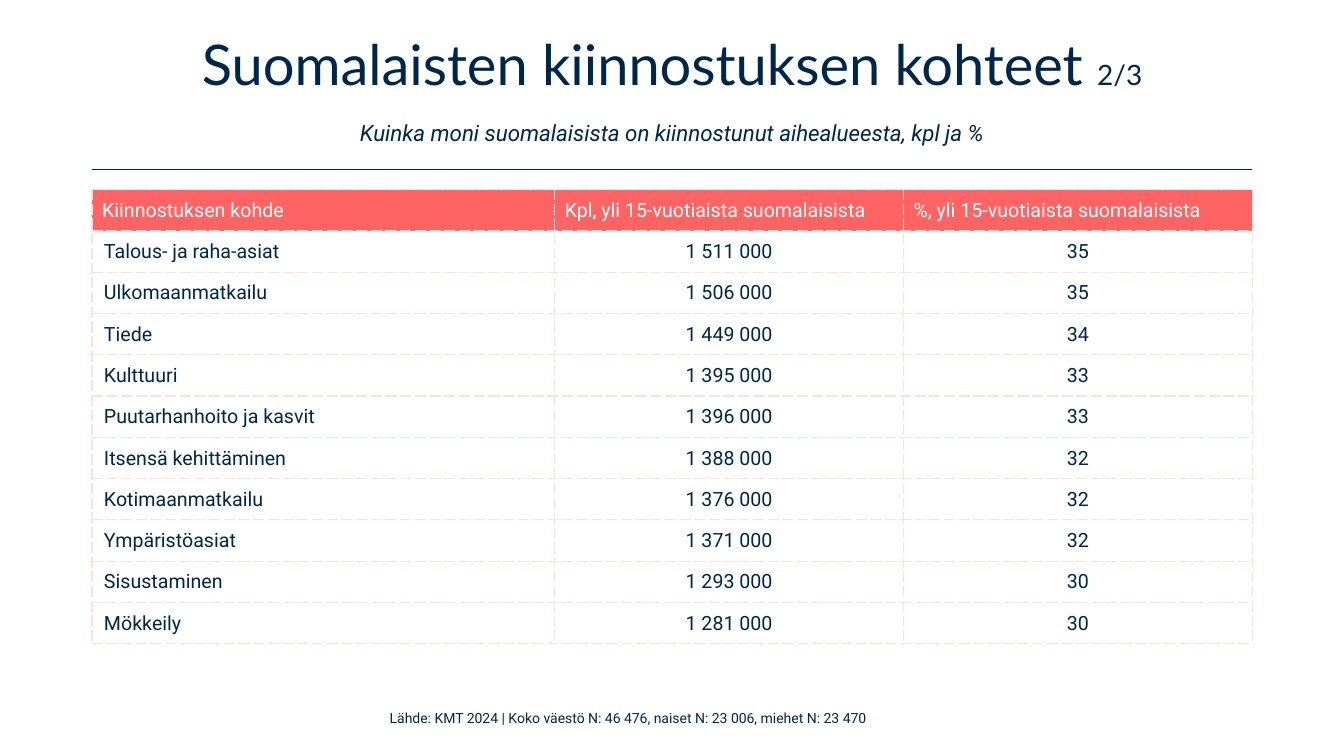
from dataclasses import dataclass

from lxml.etree import SubElement
from pptx import Presentation
from pptx.dml.color import RGBColor
from pptx.enum.shapes import MSO_CONNECTOR
from pptx.enum.text import MSO_ANCHOR, PP_ALIGN
from pptx.oxml.ns import qn
from pptx.util import Cm, Pt

# Content
TITLE = "Suomalaisten kiinnostuksen kohteet "
PAGE = "2/3"
SUBTITLE = "Kuinka moni suomalaisista on kiinnostunut aihealueesta, kpl ja %"
SOURCE = "Lähde: KMT 2024 | Koko väestö N: 46 476, naiset N: 23 006, miehet N: 23 470"
HEADER = (
    "Kiinnostuksen kohde",
    "Kpl, yli 15-vuotiaista suomalaisista",
    "%, yli 15-vuotiaista suomalaisista",
)
INTERESTS = [
    ("Talous- ja raha-asiat", "1 511 000", "35"),
    ("Ulkomaanmatkailu", "1 506 000", "35"),
    ("Tiede", "1 449 000", "34"),
    ("Kulttuuri", "1 395 000", "33"),
    ("Puutarhanhoito ja kasvit", "1 396 000", "33"),
    ("Itsensä kehittäminen", "1 388 000", "32"),
    ("Kotimaanmatkailu", "1 376 000", "32"),
    ("Ympäristöasiat", "1 371 000", "32"),
    ("Sisustaminen", "1 293 000", "30"),
    ("Mökkeily", "1 281 000", "30"),
]


@dataclass(frozen=True)
class Theme:
    navy: str = "002649"
    coral: str = "FF6464"
    pink: str = "FFE0E0"
    white: str = "FFFFFF"
    heading: str = "Lato"
    body: str = "Roboto"
    title_size: int = 40
    page_size: int = 20
    subtitle_size: int = 16
    table_size: int = 14
    source_size: int = 10


THEME = Theme()

# Layout
LEFT = Cm(2.32)
COLUMN_WIDTHS = (Cm(11.66), Cm(8.79), Cm(8.79))
TABLE_WIDTH = sum(COLUMN_WIDTHS)
TABLE_TOP = Cm(4.78)
ROW_HEIGHT = Cm(1.04)
RULE_TOP = Cm(4.27)


def format_run(run, size, font=THEME.body, color=THEME.navy, italic=False):
    run.font.size = Pt(size)
    run.font.name = font
    run.font.color.rgb = RGBColor.from_string(color)
    run.font.bold = False
    run.font.italic = italic


def add_text_box(slide, left, top, width, height):
    text_frame = slide.shapes.add_textbox(left, top, width, height).text_frame
    text_frame.word_wrap = True
    text_frame.vertical_anchor = MSO_ANCHOR.MIDDLE
    paragraph = text_frame.paragraphs[0]
    paragraph.alignment = PP_ALIGN.CENTER
    return paragraph


def add_borders(cell):
    properties = cell._tc.get_or_add_tcPr()
    for position, side in enumerate(("lnL", "lnR", "lnT", "lnB")):
        line = SubElement(properties, qn(f"a:{side}"), w=str(Pt(1)))
        fill = SubElement(line, qn("a:solidFill"))
        SubElement(fill, qn("a:srgbClr"), val=THEME.pink)
        SubElement(line, qn("a:prstDash"), val="sysDash")
        properties.insert(position, line)


def add_title(slide):
    paragraph = add_text_box(slide, LEFT, Cm(1.07), TABLE_WIDTH, Cm(2.72))
    paragraph.line_spacing = Pt(35)
    paragraph.space_after = Pt(18)
    paragraph.text = TITLE
    format_run(paragraph.runs[0], THEME.title_size, THEME.heading)
    page = paragraph.add_run()
    page.text = PAGE
    format_run(page, THEME.page_size, THEME.heading)
    paragraph.add_line_break()
    subtitle = paragraph.add_run()
    subtitle.text = SUBTITLE
    format_run(subtitle, THEME.subtitle_size, italic=True)


def add_rule(slide):
    rule = slide.shapes.add_connector(
        MSO_CONNECTOR.STRAIGHT, LEFT, RULE_TOP, LEFT + TABLE_WIDTH, RULE_TOP)
    rule.line.color.rgb = RGBColor.from_string(THEME.navy)
    rule.line.width = Pt(1)
    SubElement(rule._element.spPr, qn("a:effectLst"))


def add_interest_table(slide):
    rows = [HEADER, *INTERESTS]
    table = slide.shapes.add_table(
        len(rows), len(HEADER), LEFT, TABLE_TOP,
        TABLE_WIDTH, ROW_HEIGHT * len(rows)).table
    table.horz_banding = False
    for column, width in zip(table.columns, COLUMN_WIDTHS):
        column.width = width
    for row_index, values in enumerate(rows):
        table.rows[row_index].height = ROW_HEIGHT
        for column_index, value in enumerate(values):
            cell = table.cell(row_index, column_index)
            cell.text = value
            cell.vertical_anchor = MSO_ANCHOR.MIDDLE
            paragraph = cell.text_frame.paragraphs[0]
            if row_index == 0:
                cell.fill.solid()
                cell.fill.fore_color.rgb = RGBColor.from_string(THEME.coral)
                color = THEME.white
            else:
                cell.fill.background()
                color = THEME.navy
                cell.margin_left = Cm(0.02 if column_index else 0.3)
                cell.margin_right = cell.margin_top = Cm(0.02)
                cell.margin_bottom = 0
                if column_index:
                    paragraph.alignment = PP_ALIGN.CENTER
            format_run(paragraph.runs[0], THEME.table_size, color=color)
            add_borders(cell)


def add_source(slide):
    paragraph = add_text_box(slide, Cm(7.62), Cm(17.75), Cm(16.41), Cm(0.69))
    paragraph.text = SOURCE
    format_run(paragraph.runs[0], THEME.source_size)


def main():
    presentation = Presentation()
    presentation.slide_width = Cm(33.87)
    presentation.slide_height = Cm(19.05)
    slide = presentation.slides.add_slide(presentation.slide_layouts[6])
    add_source(slide)
    add_title(slide)
    add_rule(slide)
    add_interest_table(slide)
    presentation.save("out.pptx")


if __name__ == "__main__":
    main()
